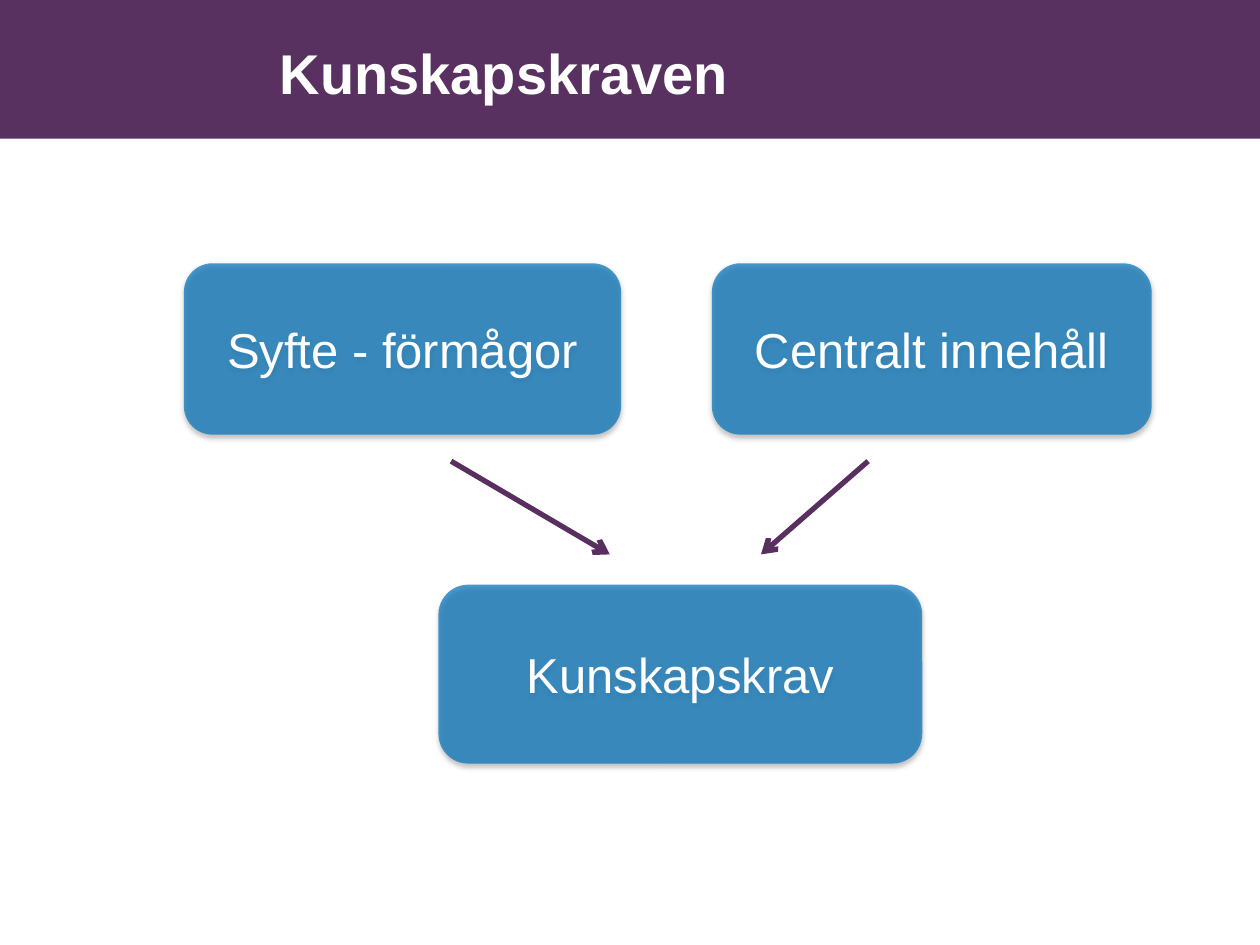
import pptx
import pptx.util
import pptx.dml.color
import pptx.enum.shapes
import pptx.enum.text
import pptx.oxml
import pptx.oxml.ns
from dataclasses import dataclass
from lxml import etree


@dataclass(frozen=True)
class Theme:
    font: str = "Arial"
    band: str = "593160"
    box: str = "0071B9"
    arrow: str = "582F5F"
    text: str = "FFFFFF"
    shadow: str = "000000"
    title_size: int = 32
    box_size: int = 28
    arrow_width: int = 3


theme = Theme()
rgb = pptx.dml.color.RGBColor.from_string
qn = pptx.oxml.ns.qn
shapes_enum = pptx.enum.shapes


def write(frame, text, size, bold=False, align="LEFT", wrap=True):
    frame.auto_size = pptx.enum.text.MSO_AUTO_SIZE.NONE
    frame.word_wrap = wrap
    frame.vertical_anchor = pptx.enum.text.MSO_ANCHOR.MIDDLE
    frame.text = text
    paragraph = frame.paragraphs[0]
    paragraph.alignment = getattr(pptx.enum.text.PP_ALIGN, align)
    font = paragraph.runs[0].font
    font.name, font.size, font.bold = theme.font, pptx.util.Pt(size), bold
    font.color.rgb = rgb(theme.text)


deck = pptx.Presentation()
deck.slide_width = pptx.util.Inches(10)
deck.slide_height = pptx.util.Inches(7.5)
column, row = deck.slide_width / 100, deck.slide_height / 75


def grid(x, y, *extent):
    units = (column, row, column, row)
    return [round(n * unit) for n, unit in zip((x, y, *extent), units)]


slide = deck.slides.add_slide(deck.slide_layouts[5])
heading = slide.shapes.title
heading.left, heading.top, heading.width, heading.height = grid(21.2, 2.5, 70.2, 6.5)
write(heading.text_frame, "Kunskapskraven", theme.title_size, bold=True)

band = slide.shapes.add_shape(shapes_enum.MSO_SHAPE.RECTANGLE, *grid(0, 0, 100, 11))
band.shadow.inherit = False
band.fill.solid()
band.fill.fore_color.rgb = rgb(theme.band)
band.line.fill.background()
heading._element.addprevious(band._element)

for label, place in (
    ("Centralt innehåll", (56.5, 20.9, 34.9, 13.6)),
    ("Syfte - förmågor", (14.6, 20.9, 34.7, 13.6)),
    ("Kunskapskrav", (34.8, 46.4, 38.4, 14.2)),
):
    box = slide.shapes.add_shape(
        shapes_enum.MSO_SHAPE.FLOWCHART_ALTERNATE_PROCESS, *grid(*place))
    box.fill.solid()
    box.fill.fore_color.rgb = rgb(theme.box)
    box.line.fill.background()
    box.shadow.inherit = False
    properties = box._element.spPr
    box_color = properties.find(qn("a:solidFill")).find(qn("a:srgbClr"))
    etree.SubElement(box_color, qn("a:alpha"), val="70000")
    shadow = etree.SubElement(
        properties.find(qn("a:effectLst")), qn("a:outerShdw"),
        blurRad=str(pptx.util.Pt(3.1)), dist=str(pptx.util.Pt(1.8)),
        dir="5400000", rotWithShape="0")
    shadow_color = etree.SubElement(shadow, qn("a:srgbClr"), val=theme.shadow)
    etree.SubElement(shadow_color, qn("a:alpha"), val="35000")
    write(box.text_frame, label, theme.box_size, align="CENTER", wrap=False)

for start_x, end_x in ((35.8, 48.4), (68.9, 60.4)):
    arrow = slide.shapes.add_connector(
        shapes_enum.MSO_CONNECTOR.STRAIGHT, *grid(start_x, 36.6), *grid(end_x, 44))
    arrow.line.color.rgb = rgb(theme.arrow)
    arrow.line.width = pptx.util.Pt(theme.arrow_width)
    etree.SubElement(arrow.line._get_or_add_ln(), qn("a:tailEnd"), type="arrow")
    etree.SubElement(arrow._element.spPr, qn("a:effectLst"))

deck.save("out.pptx")
